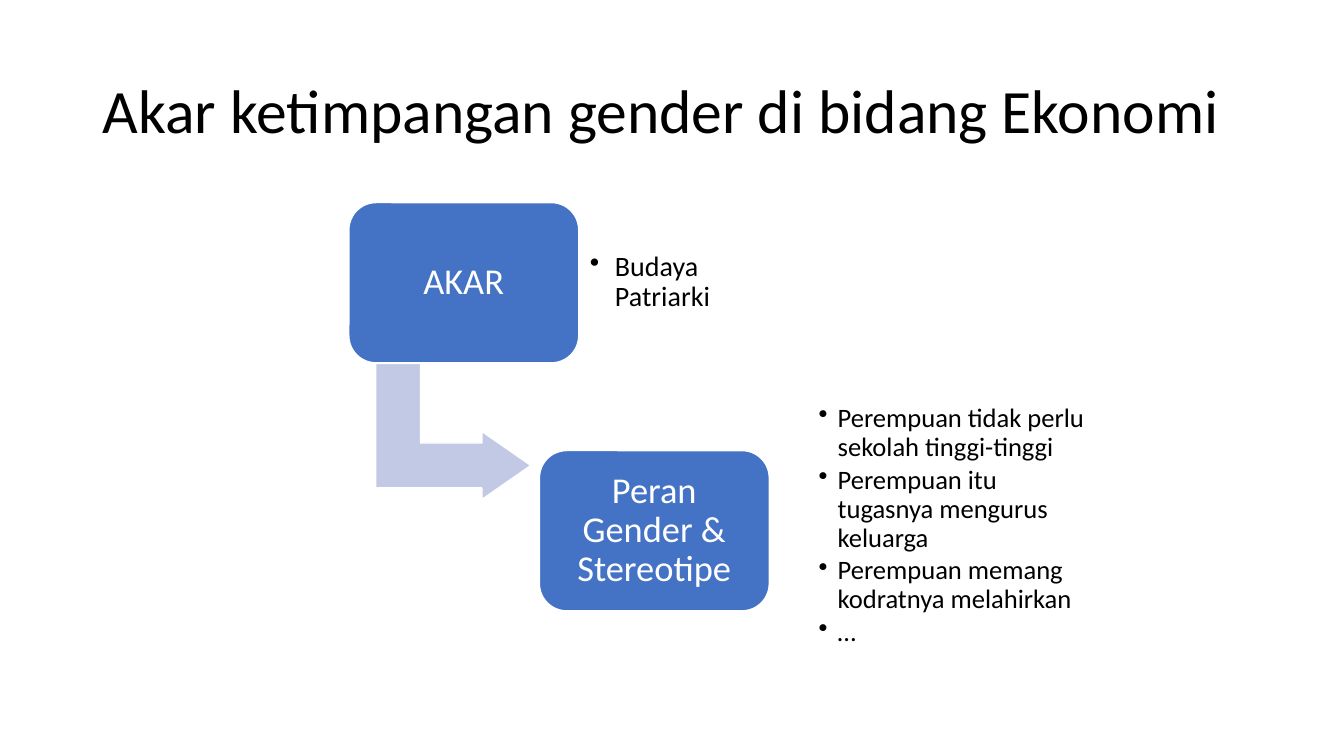
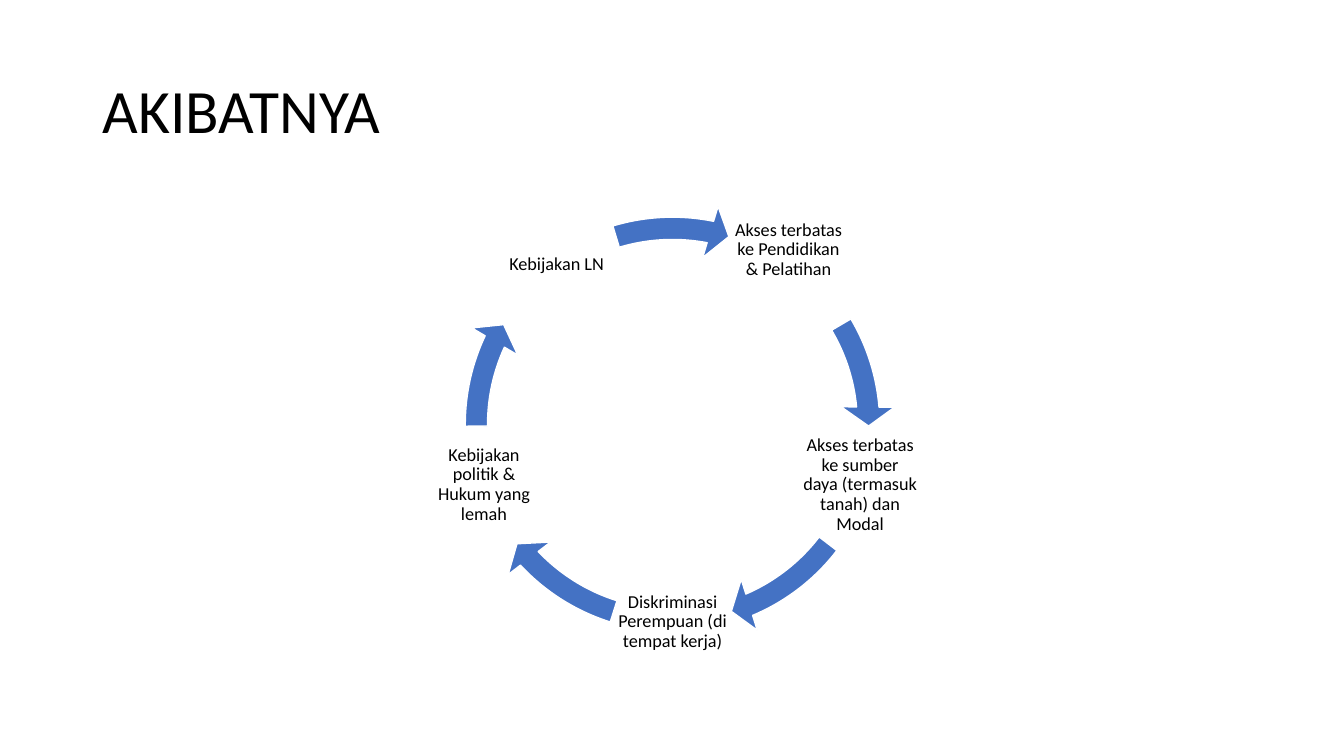
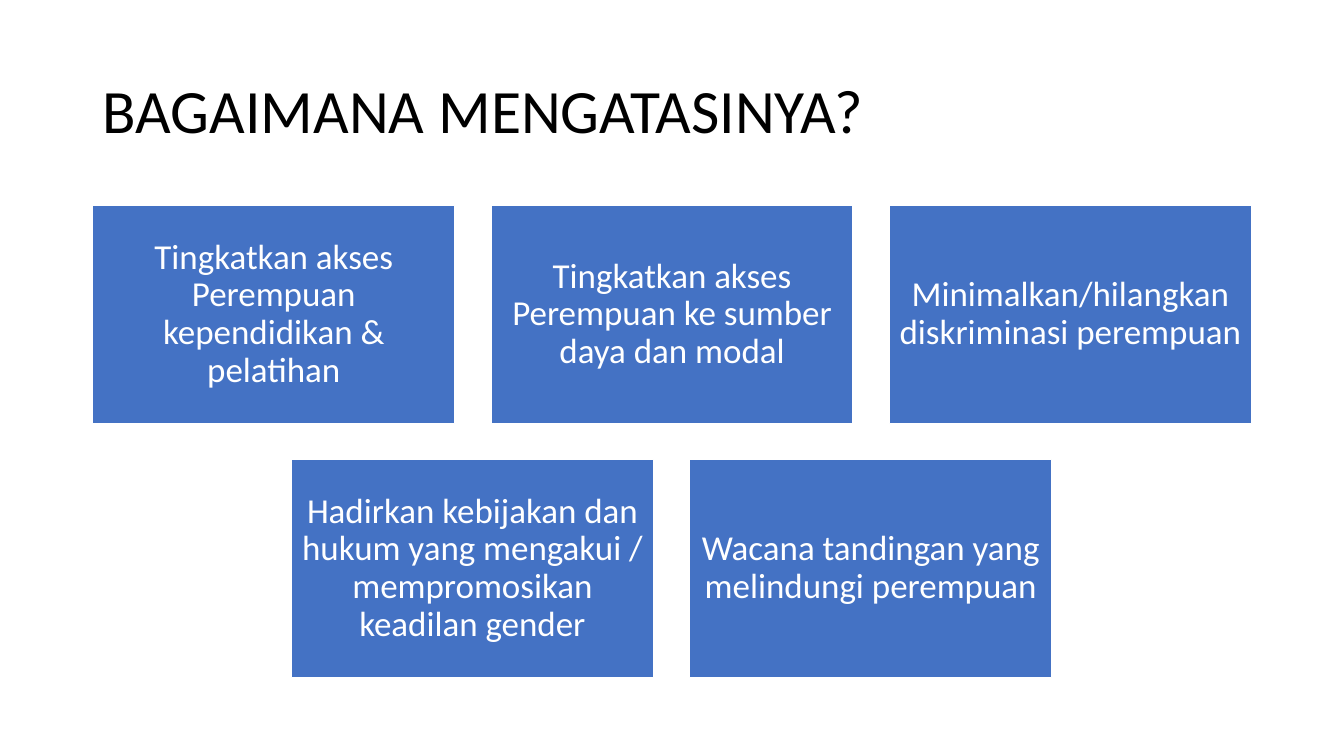
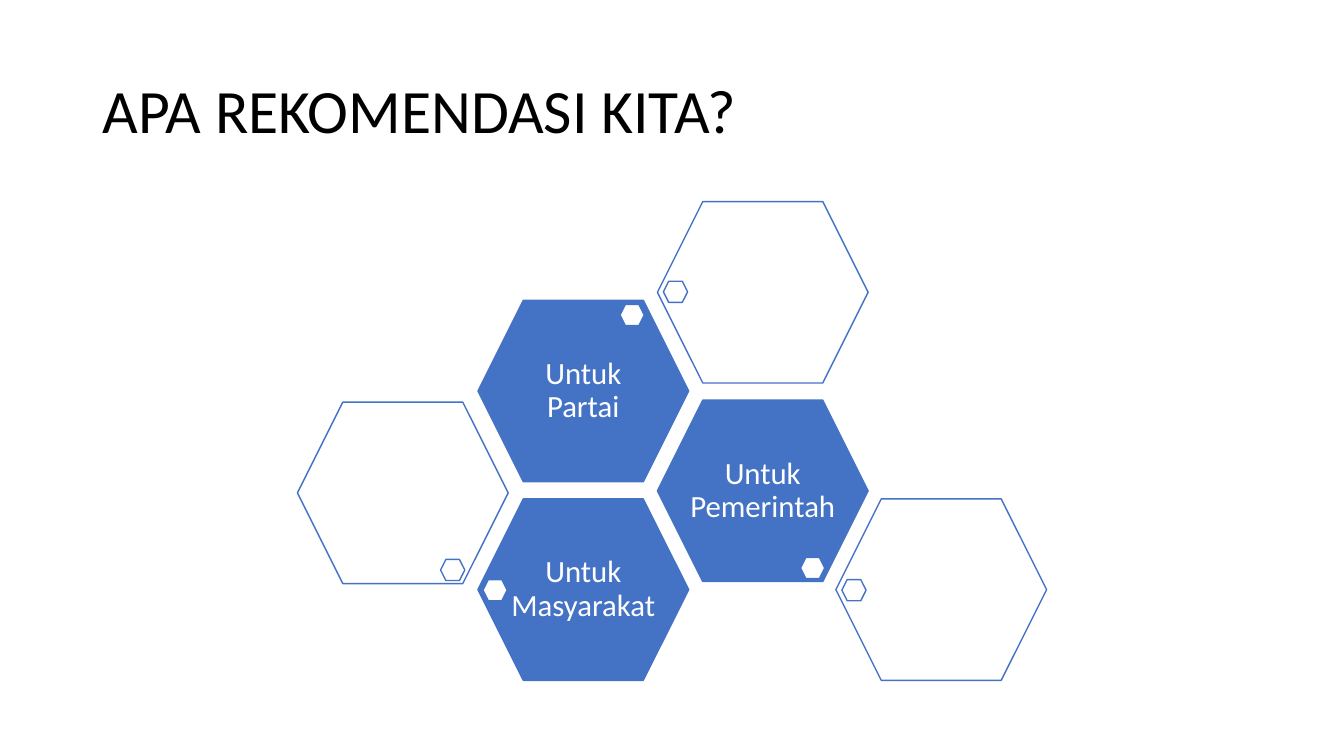
"""Build four slides on gender inequality in the economy."""
from dataclasses import dataclass

from lxml.etree import SubElement
from pptx import Presentation
from pptx.dml.color import RGBColor
from pptx.enum.shapes import MSO_SHAPE
from pptx.enum.text import MSO_ANCHOR, MSO_AUTO_SIZE, PP_ALIGN
from pptx.oxml.ns import qn
from pptx.shapes.autoshape import Shape
from pptx.slide import Slide
from pptx.text.text import TextFrame
from pptx.util import Emu, Pt

SCALE = 9144
WIDE, HIGH = 1333, 750
FONT = "Calibri"
HUES = {"blue": "4472C4", "pale": "C1C9E4", "white": "FFFFFF", "black": "000000"}


@dataclass(frozen=True)
class Box:
    """Hold a place in px."""
    x: int
    y: int
    w: int
    h: int


@dataclass(frozen=True)
class Style:
    """Hold the look of a text, with insets as left, top, right, bottom."""
    size: int
    hue: str
    pads: tuple[int, int, int, int]
    align: PP_ALIGN = PP_ALIGN.CENTER
    indent: int = 0


@dataclass(frozen=True)
class Step:
    """Hold a label of the cycle and the arrow after it."""
    x: int
    y: int
    text: str
    end: float
    start: float
    foot: int = 2


@dataclass(frozen=True)
class Cell:
    """Hold a hexagon and the place of its small mark."""
    x: int
    y: int
    dot_x: int
    dot_y: int
    text: str = ""


TITLE = Style(44, "black", (10, 5, 10, 5), PP_ALIGN.LEFT)
CARD = Style(26, "white", (11, 11, 11, 11))
TILE = Style(25, "white", (10, 10, 10, 10))
COMB = Style(22, "white", (0, 3, 0, 3))
ROOT = Style(20, "black", (11, 11, 11, 11), PP_ALIGN.LEFT, 25)
ROLE = Style(19, "black", (10, 10, 10, 10), PP_ALIGN.LEFT, 19)

STEPS = [
    Step(723, 203, "Akses terbatas ke Pendidikan & Pelatihan", 212.95, 197.64, 30),
    Step(794, 422, "Akses terbatas ke sumber daya (termasuk tanah) dan Modal",
         40.17, 22.51),
    Step(608, 558, "Diskriminasi Perempuan (di tempat kerja)", 82.13, 64.48),
    Step(421, 422, "Kebijakan politik & Hukum yang lemah", 123, 107.69),
    Step(493, 203, "Kebijakan LN", 168.68, 151.97),
]
ROWS = [
    ["Tingkatkan akses Perempuan kependidikan & pelatihan",
     "Tingkatkan akses Perempuan ke sumber daya dan modal",
     "Minimalkan/hilangkan diskriminasi perempuan"],
    ["Hadirkan kebijakan dan hukum yang mengakui / mempromosikan keadilan gender",
     "Wacana tandingan yang melindungi perempuan"],
]
CELLS = [
    Cell(474, 495, 479, 575, "Untuk Masyarakat"),
    Cell(295, 399, 437, 555),
    Cell(652, 397, 794, 553, "Untuk Pemerintah"),
    Cell(829, 495, 835, 575),
    Cell(474, 298, 615, 302, "Untuk Partai"),
    Cell(652, 200, 658, 279),
]


def px(count: int) -> Emu:
    """Turn px into EMU."""
    return Emu(count * SCALE)


def spot(box: Box) -> tuple[Emu, Emu, Emu, Emu]:
    """Give a box in EMU."""
    return px(box.x), px(box.y), px(box.w), px(box.h)


def tint(hue: str) -> RGBColor:
    """Give a named colour."""
    return RGBColor.from_string(HUES[hue])


def write(frame: TextFrame, lines: list[str], style: Style) -> None:
    """Write one paragraph a line in one style."""
    frame.word_wrap = True
    frame.auto_size = MSO_AUTO_SIZE.NONE
    frame.vertical_anchor = MSO_ANCHOR.MIDDLE
    (frame.margin_left, frame.margin_top,
     frame.margin_right, frame.margin_bottom) = map(px, style.pads)
    for i, line in enumerate(lines):
        para = frame.add_paragraph() if i else frame.paragraphs[0]
        para.alignment = style.align
        para.line_spacing = 0.9
        if style.indent:
            para.space_after = Pt(3)
            props = para._p.get_or_add_pPr()
            props.set("marL", str(px(style.indent)))
            props.set("indent", str(-px(style.indent)))
            SubElement(props, qn("a:buChar"), char="•")
        run = para.add_run()
        run.text = line
        run.font.name = FONT
        run.font.size = Pt(style.size)
        run.font.color.rgb = tint(style.hue)


def note(slide: Slide, box: Box, lines: list[str], style: Style) -> None:
    """Add a text box."""
    write(slide.shapes.add_textbox(*spot(box)).text_frame, lines, style)


def draw(slide: Slide, kind: MSO_SHAPE, box: Box, fill: str = "blue",
         edge: str = "white", bends: tuple[float, ...] = ()) -> Shape:
    """Add a flat shape."""
    shape = slide.shapes.add_shape(kind, *spot(box))
    shape.shadow.inherit = False
    shape.fill.solid()
    shape.fill.fore_color.rgb = tint(fill)
    shape.line.color.rgb = tint(edge)
    shape.line.width = Pt(1)
    for i, bend in enumerate(bends):
        shape.adjustments[i] = bend
    return shape


def fade(shape: Shape, share: int) -> None:
    """Set how solid a fill is, in percent."""
    for hue in shape._element.spPr.find(qn("a:solidFill")):
        SubElement(hue, qn("a:alpha"), val=str(share * 1000))


def start(deck: Presentation, text: str) -> Slide:
    """Add a slide with its title."""
    slide = deck.slides.add_slide(deck.slide_layouts[5])
    title = slide.shapes.title
    title.left, title.top, title.width, title.height = spot(Box(92, 40, 1150, 145))
    write(title.text_frame, [text], TITLE)
    return slide


def roots(slide: Slide) -> None:
    """Draw the two linked cards and their lists."""
    arrow = draw(slide, MSO_SHAPE.BENT_UP_ARROW, Box(382, 351, 135, 154), "pale",
                 bends=(0.33, 0.25, 0.36))
    arrow.rotation = 90
    for x, y, text in ((346, 201, "AKAR"), (535, 447, "Peran Gender & Stereotipe")):
        card = draw(slide, MSO_SHAPE.ROUNDED_RECTANGLE, Box(x, y, 228, 159),
                    bends=(0.17,))
        write(card.text_frame, [text], CARD)
    note(slide, Box(574, 216, 166, 129), ["Budaya Patriarki"], ROOT)
    note(slide, Box(802, 375, 284, 294), [
        "Perempuan tidak perlu sekolah tinggi-tinggi",
        "Perempuan itu tugasnya mengurus keluarga",
        "Perempuan memang kodratnya melahirkan",
        "…",
    ], ROLE)


def cycle(slide: Slide) -> None:
    """Draw the ring of labels and arrows."""
    for step in STEPS:
        style = Style(13, "black", (2, 2, 2, step.foot))
        note(slide, Box(step.x, step.y, 118, 118), [step.text], style)
        draw(slide, MSO_SHAPE.CIRCULAR_ARROW, Box(446, 200, 442, 442),
             bends=(0.05, 3.35, step.end, step.start, 0.06))


def tiles(slide: Slide) -> None:
    """Draw centred rows of tiles."""
    wide, high, gap = 359, 216, 36
    for j, row in enumerate(ROWS):
        left = (WIDE + gap - len(row) * (wide + gap)) // 2
        for i, text in enumerate(row):
            box = Box(left + i * (wide + gap), 204 + j * (high + gap), wide, high)
            tile = draw(slide, MSO_SHAPE.RECTANGLE, box)
            write(tile.text_frame, [text], TILE)


def comb(slide: Slide) -> None:
    """Draw the hexagons and their marks."""
    for cell in CELLS:
        shape = draw(slide, MSO_SHAPE.HEXAGON, Box(cell.x, cell.y, 209, 180),
                     "blue" if cell.text else "white", "blue", (0.25,))
        if cell.text:
            write(shape.text_frame, [cell.text], COMB)
        else:
            fade(shape, 90)
        draw(slide, MSO_SHAPE.HEXAGON, Box(cell.dot_x, cell.dot_y, 24, 21),
             "white", "blue", (0.25,))


def main() -> None:
    """Build and save the deck."""
    deck = Presentation()
    deck.slide_width, deck.slide_height = px(WIDE), px(HIGH)
    for text, fill in (
        ("Akar ketimpangan gender di bidang Ekonomi", roots),
        ("AKIBATNYA", cycle),
        ("BAGAIMANA MENGATASINYA?", tiles),
        ("APA REKOMENDASI KITA?", comb),
    ):
        fill(start(deck, text))
    deck.save("out.pptx")


if __name__ == "__main__":
    main()
